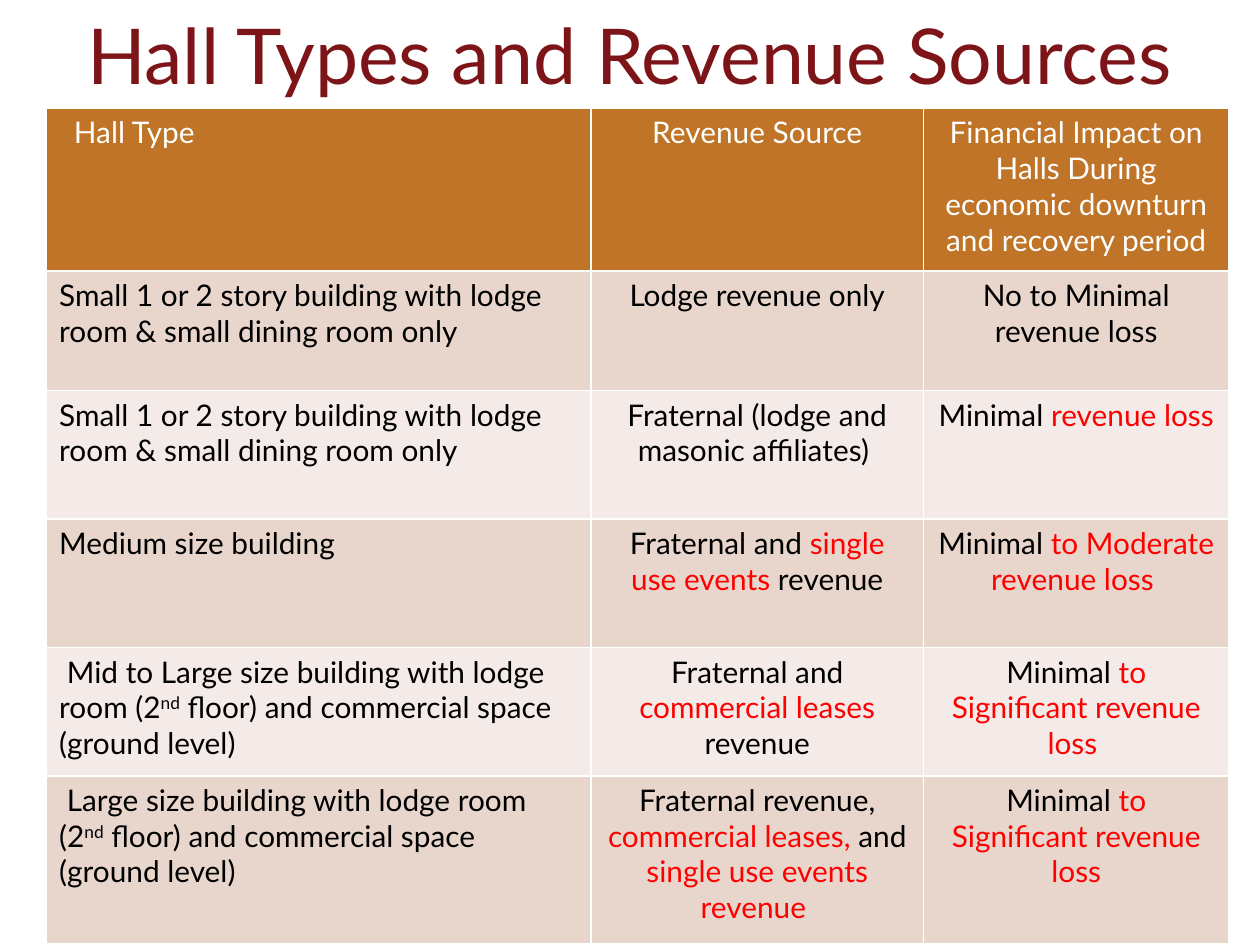
from pptx import Presentation
from pptx.dml.color import RGBColor
from pptx.enum.text import MSO_ANCHOR, PP_ALIGN
from pptx.util import Cm, Pt

CENTER, LEFT = PP_ALIGN.CENTER, PP_ALIGN.LEFT
MIDDLE = MSO_ANCHOR.MIDDLE
TITLE_ONLY = 5

COLUMN_WIDTHS = (10.97, 6.71, 6.15)
ROW_HEIGHTS = (3.28, 2.41, 2.59, 2.59, 2.59, 3.38)
HALLS = (
    ("Hall Type", "Revenue Source",
     "Financial Impact on Halls During economic downturn and recovery period"),
    ("Small 1 or 2 story building with lodge room & small dining room only",
     "Lodge revenue only", "No to Minimal revenue loss"),
    ("Small 1 or 2 story building with lodge room & small dining room only",
     "Fraternal (lodge and masonic affiliates) ", "Minimal *revenue loss*"),
    ("Medium size building", "Fraternal and *single use events* revenue",
     "Minimal* to Moderate revenue loss *"),
    (" Mid to Large size building with lodge room (2^nd^ floor) and commercial space (ground level)",
     "Fraternal and *commercial leases *revenue",
     "Minimal *to Significant revenue loss *"),
    (" Large size building with lodge room (2^nd^ floor) and commercial space (ground level)",
     "Fraternal revenue, *commercial leases, *and *single use events revenue *",
     "Minimal* to Significant revenue loss*"),
)


def color(value):
    """Return the colour for a hex string."""
    return RGBColor.from_string(value)


class HallSlide:
    """Holds the style and the current slide; *text* is red and ^text^ is raised."""

    font = "Lato"
    title_color = "7D1418"
    header_fill = "BF7427"
    band_fills = ("F4EBE8", "E8D6CD")
    header_text, body_text, accent_text = "FFFFFF", "000000", "FF0000"

    def __init__(self, presentation):
        self.slide = presentation.slides.add_slide(presentation.slide_layouts[TITLE_ONLY])

    def format_run(self, run, size, value):
        run.font.name = self.font
        run.font.size = Pt(size)
        run.font.bold = False
        run.font.color.rgb = color(value)

    def title(self, text):
        heading = self.slide.shapes.title
        heading.left, heading.top = Cm(1.27), Cm(0)
        heading.width, heading.height = Cm(22.86), Cm(2.18)
        frame = heading.text_frame
        frame.text = text
        frame.vertical_anchor = MIDDLE
        frame.paragraphs[0].alignment = CENTER
        self.format_run(frame.paragraphs[0].runs[0], 44, self.title_color)

    def rich_text(self, paragraph, text, plain):
        for i, passage in enumerate(text.split("*")):
            for j, part in enumerate(passage.split("^")):
                if not part:
                    continue
                run = paragraph.add_run()
                run.text = part
                self.format_run(run, 17, self.accent_text if i % 2 else plain)
                if j % 2:
                    run.font._element.set("baseline", "30000")

    def table(self, left, top, widths, heights, rows):
        halls = self.slide.shapes.add_table(
            len(rows), len(widths), Cm(left), Cm(top), Cm(sum(widths)), Cm(sum(heights))
        ).table
        for column, width in zip(halls.columns, widths):
            column.width = Cm(width)
        for r, (row, height) in enumerate(zip(rows, heights)):
            halls.rows[r].height = Cm(height)
            for c, text in enumerate(row):
                cell = halls.cell(r, c)
                cell.fill.solid()
                cell.fill.fore_color.rgb = color(self.band_fills[r % 2] if r else self.header_fill)
                paragraph = cell.text_frame.paragraphs[0]
                paragraph.alignment = CENTER if c else LEFT
                self.rich_text(paragraph, text, self.body_text if r else self.header_text)
        halls.cell(0, 0).margin_left = Cm(0.55)


def main():
    presentation = Presentation()
    presentation.slide_width, presentation.slide_height = Cm(25.4), Cm(19.05)
    page = HallSlide(presentation)
    page.title("Hall Types and Revenue Sources")
    page.table(0.94, 2.18, COLUMN_WIDTHS, ROW_HEIGHTS, HALLS)
    presentation.save("out.pptx")


if __name__ == "__main__":
    main()
